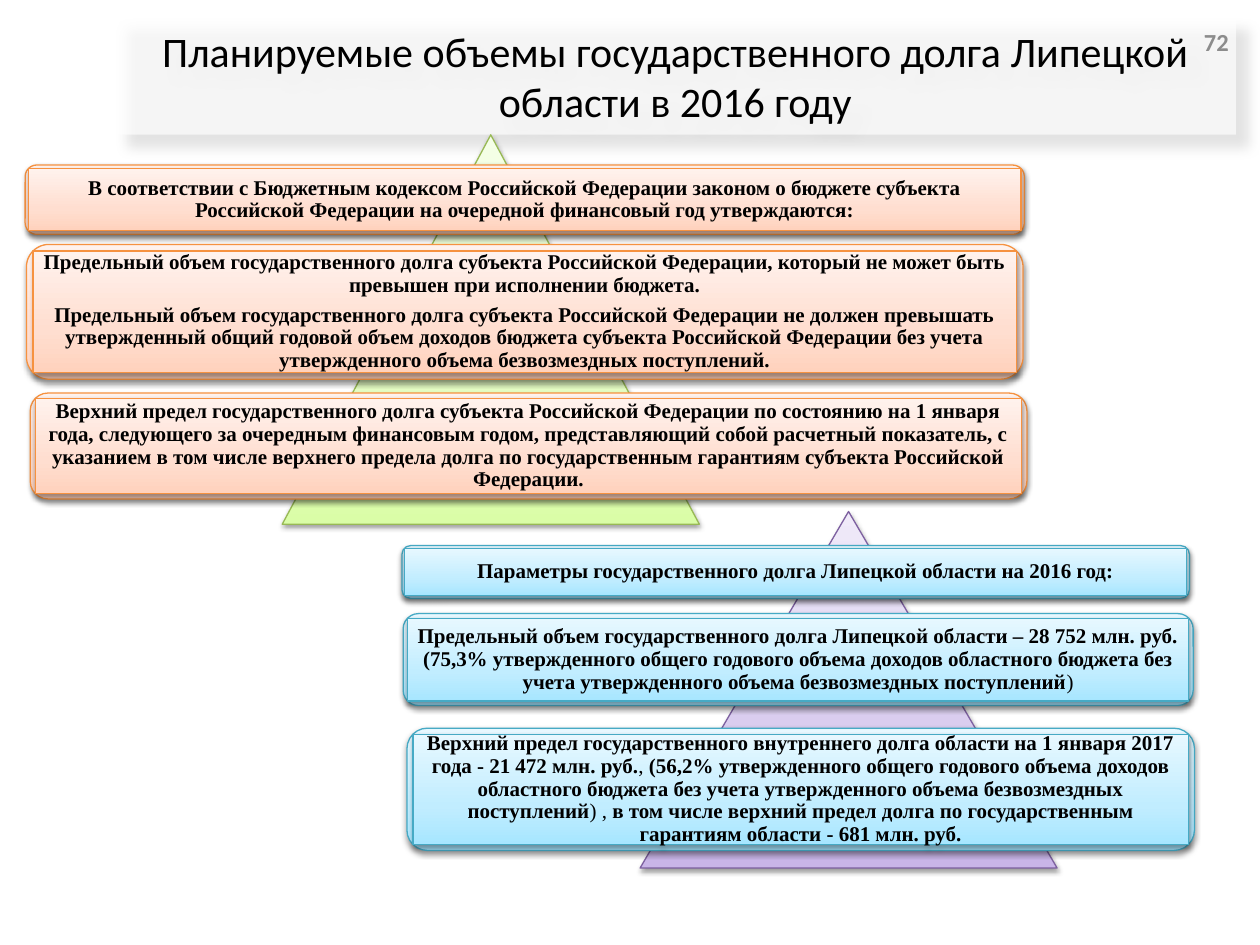
from copy import deepcopy

from lxml import etree
from pptx import Presentation
from pptx.dml.color import RGBColor
from pptx.enum.shapes import MSO_SHAPE
from pptx.enum.text import MSO_ANCHOR, PP_ALIGN
from pptx.oxml.ns import qn
from pptx.util import Inches, Pt

RECTANGLE = MSO_SHAPE.RECTANGLE
ROUNDED = MSO_SHAPE.ROUNDED_RECTANGLE
TRIANGLE = MSO_SHAPE.ISOSCELES_TRIANGLE
MIDDLE = MSO_ANCHOR.MIDDLE
CENTER, RIGHT = PP_ALIGN.CENTER, PP_ALIGN.RIGHT

COLORS = {"white": "FFFFFF", "black": "000000", "number": "8C8C8C"}
THEMES = {
    "green": {"stops": ("DAFDA7", "E4FCC2", "F5FFE7"), "line": "98B955"},
    "purple": {"stops": ("C9B5E8", "D8CBEE", "F0EAF9"), "line": "7D60A0"},
    "orange": {"stops": ("FFD2BD", "FFDED0", "FFF2ED"), "line": "F69240"},
    "blue": {"stops": ("A7E6FF", "C1EDFF", "E7F8FF"), "line": "46AAC5"},
}
STOP_POSITIONS = (0, 0.35, 1)
CORNER_INSET = 0.05

RULES = [
    ((0.2, 1.31, 7.93, 0.55), [[
        ("В соответствии с Бюджетным кодексом Российской Федерации законом о бюджете субъекта "
         "Российской Федерации на очередной финансовый год утверждаются:", True)]]),
    ((0.21, 1.94, 7.91, 1.07), [
        [("Предельный объем государственного долга субъекта Российской Федерации, который не "
          "может быть превышен при исполнении бюджета.", True)],
        [("Предельный объем государственного долга субъекта Российской Федерации не должен "
          "превышать утвержденный общий годовой объем доходов бюджета субъекта Российской "
          "Федерации без учета утвержденного объема безвозмездных поступлений.", True)]]),
    ((0.24, 3.12, 7.91, 0.84), [[
        ("Верхний предел государственного долга субъекта Российской Федерации по состоянию на "
         "1 января года, следующего за очередным финансовым годом, представляющий собой "
         "расчетный показатель, с указанием в том числе верхнего предела долга по "
         "государственным гарантиям субъекта Российской Федерации.", True)]]),
]
PARAMETERS = [
    ((3.19, 4.33, 6.25, 0.42), [[
        ("Параметры государственного долга Липецкой области на 2016 год:", True)]]),
    ((3.2, 4.87, 6.27, 0.73), [[
        ("Предельный объем государственного долга Липецкой области – 28 752 млн. руб. (75,3% "
         "утвержденного общего годового объема доходов областного бюджета без учета "
         "утвержденного объема безвозмездных поступлений", True),
        (")", False)]]),
    ((3.23, 5.78, 6.25, 0.97), [[
        ("Верхний предел государственного внутреннего долга области на 1 января 2017 года - "
         "21 472 млн. руб.", True),
        (", ", False),
        ("(56,2% утвержденного общего годового объема доходов областного бюджета без учета "
         "утвержденного объема безвозмездных поступлений", True),
        (") , ", False),
        ("в том числе верхний предел долга по государственным гарантиям области - "
         "681 млн. руб.", True)]]),
]


def add_shadow(shape, opacity, blur, distance, angle):
    """Give a shape a black outer shadow."""
    shape.shadow.inherit = False
    effects = shape._element.spPr.find(qn("a:effectLst"))
    outer = etree.SubElement(
        effects, qn("a:outerShdw"), blurRad=str(Pt(blur)), dist=str(Pt(distance)),
        dir=str(angle * 60000), rotWithShape="0")
    color = etree.SubElement(outer, qn("a:srgbClr"), val=COLORS["black"])
    etree.SubElement(color, qn("a:alpha"), val=str(opacity * 1000))


def add_glossy_shape(shapes, kind, box, theme):
    """Add a shape with a vertical three-stop gradient, thin outline and shadow."""
    shape = shapes.add_shape(kind, *map(Inches, box))
    fill = shape.fill
    fill.gradient()
    fill.gradient_angle = 90
    stop_list = shape._element.spPr.find(".//" + qn("a:gsLst"))
    stop_list.insert(1, deepcopy(stop_list[0]))
    for stop, position, color in zip(fill.gradient_stops, STOP_POSITIONS, theme["stops"]):
        stop.position = position
        stop.color.rgb = RGBColor.from_string(color)
    shape.line.color.rgb = RGBColor.from_string(theme["line"])
    shape.line.width = Pt(0.75)
    add_shadow(shape, 38, 3.1, 1.6, 90)
    return shape


def style_font(font, name, size, color, bold=False):
    """Set the typeface, size, colour and weight of a font."""
    font.name = name
    font.size = Pt(size)
    font.bold = bold
    font.color.rgb = RGBColor.from_string(COLORS[color])


def add_card(slide, box, paragraphs, theme):
    """Group a rounded frame with the text panel set inside its corners."""
    left, top, width, height = box
    inset = CORNER_INSET * height
    group = slide.shapes.add_group_shape()
    add_glossy_shape(group.shapes, ROUNDED, box, theme)
    panel_box = (left + inset, top + inset, width - 2 * inset, height - 2 * inset)
    frame = add_glossy_shape(group.shapes, RECTANGLE, panel_box, theme).text_frame
    frame.word_wrap = True
    frame.vertical_anchor = MIDDLE
    frame.margin_left = frame.margin_right = Inches(0.07)
    frame.margin_top = frame.margin_bottom = Inches(0.07)
    for index, runs in enumerate(paragraphs):
        paragraph = frame.add_paragraph() if index else frame.paragraphs[0]
        paragraph.alignment = CENTER
        paragraph.line_spacing = 0.9
        paragraph.space_after = Pt(4.2)
        for text, bold in runs:
            run = paragraph.add_run()
            run.text = text
            style_font(run.font, "Times New Roman", 12, "black", bold)


def add_pyramid(slide, box, triangle_theme, cards, card_theme):
    """Place a triangle and the stack of cards that crosses it."""
    add_glossy_shape(slide.shapes, TRIANGLE, box, THEMES[triangle_theme])
    for card_box, paragraphs in cards:
        add_card(slide, card_box, paragraphs, THEMES[card_theme])


def set_heading(shape, text, alignment, size, color, bold=False):
    """Write one middle-anchored Calibri paragraph into a shape."""
    frame = shape.text_frame
    frame.word_wrap = True
    frame.vertical_anchor = MIDDLE
    frame.text = text
    paragraph = frame.paragraphs[0]
    paragraph.alignment = alignment
    style_font(paragraph.runs[0].font, "Calibri", size, color, bold)


def add_header(slide, box):
    """Add the translucent title band and the page number at its right end."""
    left, top, width, height = box
    band = slide.shapes.add_shape(RECTANGLE, *map(Inches, box))
    band.fill.solid()
    band.fill.fore_color.rgb = RGBColor.from_string(COLORS["white"])
    color = band._element.spPr.find(qn("a:solidFill"))[0]
    etree.SubElement(color, qn("a:alpha"), val="65000")
    band.line.fill.background()
    add_shadow(band, 16, 7, 10, 45)
    set_heading(band, "Планируемые объемы государственного долга Липецкой области в 2016 году",
                CENTER, 24, "black")
    number = slide.shapes.add_textbox(
        Inches(left + width - 0.64), Inches(top), Inches(0.68), Inches(0.4))
    set_heading(number, "72", RIGHT, 14, "number", True)


def main():
    """Build the debt slide and save it."""
    presentation = Presentation()
    presentation.slide_width = Inches(10)
    presentation.slide_height = Inches(7.5)
    slide = presentation.slides.add_slide(presentation.slide_layouts[6])
    add_header(slide, (0.91, 0.13, 8.9, 0.94))
    add_pyramid(slide, (2.24, 1.07, 3.31, 3.09), "green", RULES, "orange")
    add_pyramid(slide, (5.08, 4.06, 3.31, 2.83), "purple", PARAMETERS, "blue")
    presentation.save("out.pptx")


if __name__ == "__main__":
    main()
